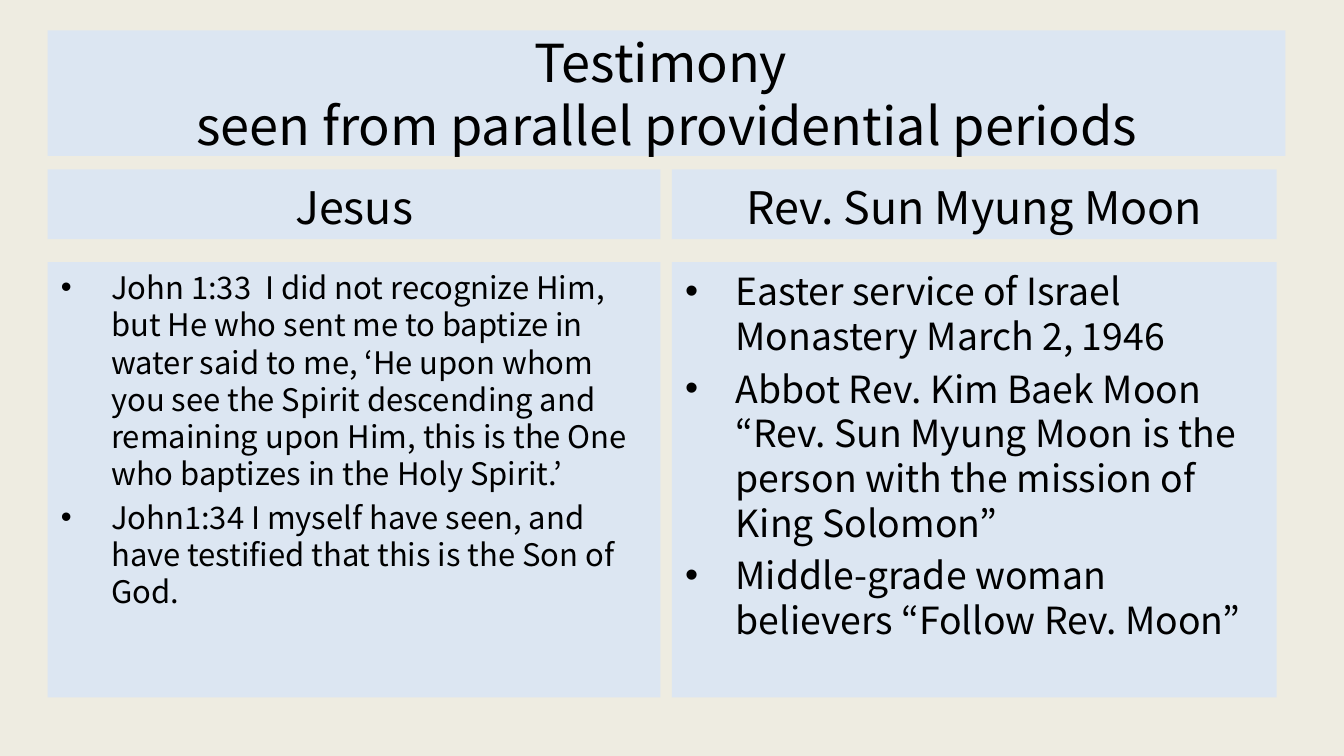
import pptx
import pptx.dml.color
import pptx.enum.text
import pptx.oxml.ns
import pptx.util
from lxml import etree

ANCHOR = pptx.enum.text.MSO_ANCHOR
ALIGN = pptx.enum.text.PP_ALIGN
THEME = {
    "background": pptx.dml.color.RGBColor.from_string("EEECE1"),
    "panel": pptx.dml.color.RGBColor.from_string("DCE6F2"),
    "text": pptx.dml.color.RGBColor.from_string("000000"),
    "font": "Noto Sans CJK KR",
    "title": 28,
    "heading": 24,
    "line_pitch": 1.2,
    "paragraph_gap": 0.2,
}

presentation = pptx.Presentation()
presentation.slide_width = pptx.util.Inches(10)
presentation.slide_height = presentation.slide_width * 9 // 16
unit = presentation.slide_width / 100  # square grid, 100 columns wide

# Grid positions: (start, extent)
TITLE_COLUMNS, TITLE_ROWS = (3.55, 92.1), (2.25, 9.35)
HEADING_ROWS, BODY_ROWS = (12.6, 5.2), (19.5, 32.4)
INDENT = round(3.75 * unit)

sides = [
    ((3.55, 45.6), "Jesus", 16.6, [
        "John 1:33  I did not recognize Him, but He who sent me to baptize in "
        "water said to me, ‘He upon whom you see the Spirit descending and "
        "remaining upon Him, this is the One who baptizes in the Holy Spirit.’",
        "John1:34 I myself have seen, and have testified that this is the Son of God.",
    ]),
    ((50, 45), "Rev. Sun Myung Moon", 20, [
        "Easter service of Israel Monastery March 2, 1946",
        "Abbot Rev. Kim Baek Moon “Rev. Sun Myung Moon is the person with the "
        "mission of King Solomon”",
        "Middle-grade woman believers “Follow Rev. Moon”",
    ]),
]


def fill_panel(shape, columns, rows, text, size, anchor, alignment):
    """Place a shape on the grid and give it the panel colour and formatted text."""
    shape.left, shape.width = (round(value * unit) for value in columns)
    shape.top, shape.height = (round(value * unit) for value in rows)
    shape.fill.solid()
    shape.fill.fore_color.rgb = THEME["panel"]
    frame = shape.text_frame
    frame.text = text
    frame.word_wrap = True
    frame.auto_size = pptx.enum.text.MSO_AUTO_SIZE.NONE
    frame.vertical_anchor = anchor
    for index, paragraph in enumerate(frame.paragraphs):
        paragraph.alignment = alignment
        paragraph.line_spacing = pptx.util.Pt(size * THEME["line_pitch"])
        paragraph.space_before = pptx.util.Pt(
            size * THEME["paragraph_gap"] if index else 0)
        for run in paragraph.runs:
            run.font.name = THEME["font"]
            run.font.size = pptx.util.Pt(size)
            run.font.color.rgb = THEME["text"]


def add_bullet(paragraph):
    properties = paragraph._p.get_or_add_pPr()
    properties.set("marL", str(INDENT))
    properties.set("indent", str(-INDENT))
    for tag, attribute, value in (("a:buFont", "typeface", "Arial"),
                                  ("a:buChar", "char", "•")):
        element = etree.SubElement(properties, pptx.oxml.ns.qn(tag))
        element.set(attribute, value)


slide = presentation.slides.add_slide(presentation.slide_layouts.get_by_name("Title Only"))
slide.background.fill.solid()
slide.background.fill.fore_color.rgb = THEME["background"]

fill_panel(slide.shapes.title, TITLE_COLUMNS, TITLE_ROWS,
           "Testimony \vseen from parallel providential periods",
           THEME["title"], ANCHOR.MIDDLE, ALIGN.CENTER)

for columns, heading, size, points in sides:
    heading_box = slide.shapes.add_textbox(0, 0, 0, 0)
    fill_panel(heading_box, columns, HEADING_ROWS, heading,
               THEME["heading"], ANCHOR.BOTTOM, ALIGN.CENTER)
    heading_box.text_frame.margin_bottom = round(0.4 * unit)

    body_box = slide.shapes.add_textbox(0, 0, 0, 0)
    fill_panel(body_box, columns, BODY_ROWS, "\n".join(points),
               size, ANCHOR.TOP, ALIGN.LEFT)
    for paragraph in body_box.text_frame.paragraphs:
        add_bullet(paragraph)

presentation.save("out.pptx")
